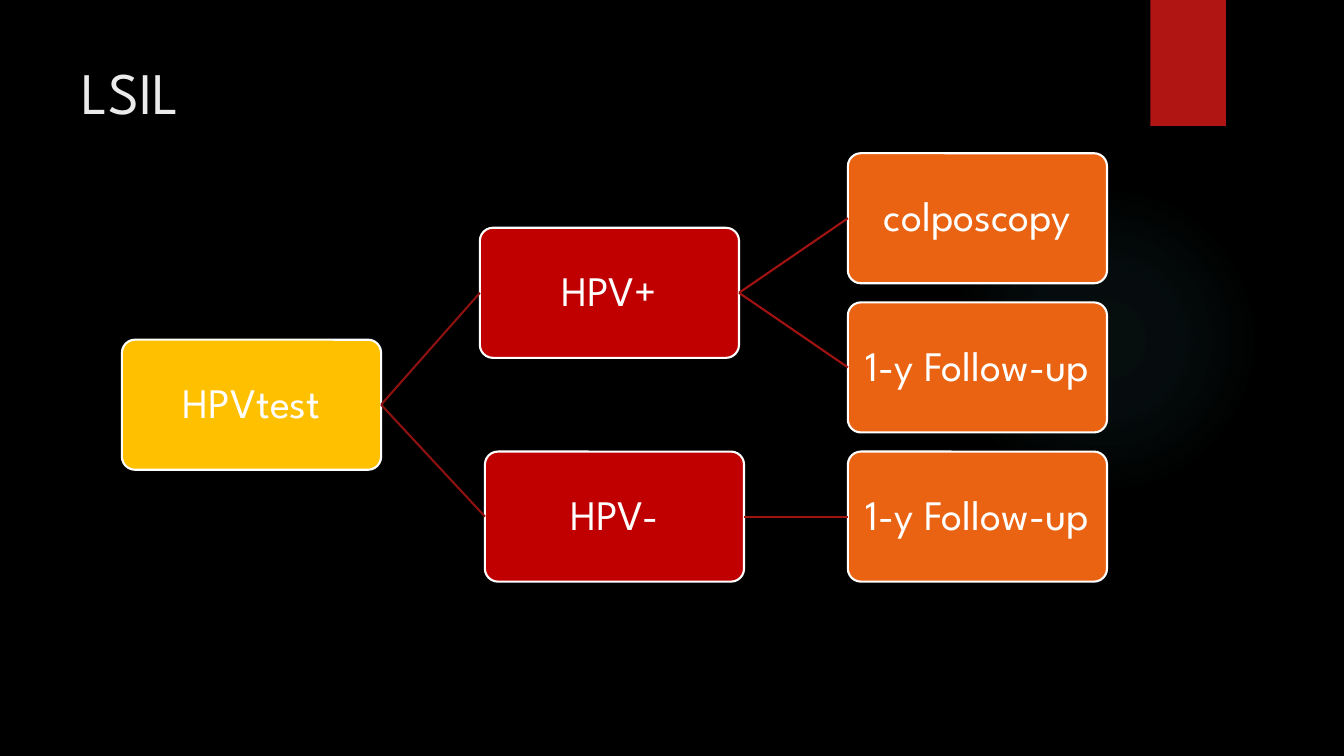
from dataclasses import dataclass
from typing import Optional

from lxml.etree import SubElement
from pptx import Presentation
from pptx.dml.color import RGBColor
from pptx.enum.shapes import MSO_CONNECTOR, MSO_SHAPE
from pptx.enum.text import MSO_ANCHOR, PP_ALIGN
from pptx.oxml import parse_xml
from pptx.oxml.ns import nsdecls, qn
from pptx.shapes.autoshape import Shape
from pptx.slide import Slide
from pptx.util import Inches, Pt

FONT = "League Spartan"
BOX_WIDTH, BOX_HEIGHT = 2.57, 1.29
BOX_INSET = 0.06

# Tree geometry: each parent is centred on the span of its children
LEAF_LEFT = 8.41
LEAF_TOPS = [1.52 + row * 1.48 for row in range(3)]
POSITIVE_TOP = (LEAF_TOPS[0] + LEAF_TOPS[1]) / 2
NEGATIVE_TOP = LEAF_TOPS[2]
TEST_TOP = (POSITIVE_TOP + NEGATIVE_TOP) / 2

YELLOW, RED, ORANGE = "FFC000", "C00000", "EA6312"
DARK_LINK, LIGHT_LINK = "8D110F", "A01311"


@dataclass
class Node:
    label: str
    left: float
    top: float
    fill: str
    parent: Optional[int] = None
    link: str = LIGHT_LINK


NODES = [
    Node("HPVtest", 1.21, TEST_TOP, YELLOW),
    Node("HPV+", 4.76, POSITIVE_TOP, RED, 0, DARK_LINK),
    Node("HPV-", 4.81, NEGATIVE_TOP, RED, 0, DARK_LINK),
    Node("colposcopy", LEAF_LEFT, LEAF_TOPS[0], ORANGE, 1),
    Node("1-y Follow-up", LEAF_LEFT, LEAF_TOPS[1], ORANGE, 1),
    Node("1-y Follow-up", LEAF_LEFT, LEAF_TOPS[2], ORANGE, 2),
]


def color(value: str) -> RGBColor:
    return RGBColor.from_string(value)


def add_plain_shape(page: Slide, kind: MSO_SHAPE, left: float, top: float,
                    width: float, height: float, fill: str) -> Shape:
    shape = page.shapes.add_shape(
        kind, Inches(left), Inches(top), Inches(width), Inches(height))
    shape.shadow.inherit = False
    shape.fill.solid()
    shape.fill.fore_color.rgb = color(fill)
    shape.line.fill.background()
    return shape


def add_glow(page: Slide) -> None:
    glow = add_plain_shape(page, MSO_SHAPE.OVAL, 9.41, 1.83, 3.08, 3.08, "50B9C1")
    stops = "".join(
        f'<a:gs pos="{position * 1000}"><a:srgbClr val="50B9C1">'
        f'<a:alpha val="{alpha * 1000}"/></a:srgbClr></a:gs>'
        for position, alpha in [(0, 7), (36, 6), (69, 0)])
    gradient = parse_xml(
        f'<a:gradFill {nsdecls("a")}><a:gsLst>{stops}</a:gsLst><a:path path="circle">'
        '<a:fillToRect l="50000" t="50000" r="50000" b="50000"/></a:path></a:gradFill>')
    properties = glow.element.spPr
    properties.replace(properties.find(qn("a:solidFill")), gradient)


def style_text(box: Shape, text: str, size: float, text_color: str) -> None:
    box.text_frame.word_wrap = True
    box.text_frame.text = text
    span = box.text_frame.paragraphs[0].runs[0]
    span.font.name = FONT
    span.font.size = Pt(size)
    span.font.color.rgb = color(text_color)


def add_node(page: Slide, node: Node) -> Shape:
    box = add_plain_shape(page, MSO_SHAPE.ROUNDED_RECTANGLE, node.left, node.top,
                          BOX_WIDTH, BOX_HEIGHT, node.fill)
    box.adjustments[0] = 0.1
    box.line.color.rgb = color("FFFFFF")
    box.line.width = Pt(1.5)
    style_text(box, node.label, 30, "FFFFFF")
    frame = box.text_frame
    frame.vertical_anchor = MSO_ANCHOR.MIDDLE
    frame.margin_left = frame.margin_right = Inches(BOX_INSET)
    frame.margin_top = frame.margin_bottom = Inches(BOX_INSET)
    para = frame.paragraphs[0]
    para.alignment = PP_ALIGN.CENTER
    para.line_spacing = 0.9
    return box


def add_link(page: Slide, parent: Shape, child: Shape, line_color: str) -> None:
    link = page.shapes.add_connector(MSO_CONNECTOR.STRAIGHT, 0, 0, 0, 0)
    link.begin_connect(parent, 3)
    link.end_connect(child, 1)
    link.line.color.rgb = color(line_color)
    link.line.width = Pt(1.5)
    SubElement(link.element.spPr, qn("a:effectLst"))


def main() -> None:
    deck = Presentation()
    deck.slide_width, deck.slide_height = Inches(13.33), Inches(7.5)
    page = deck.slides.add_slide(deck.slide_layouts[6])
    page.background.fill.solid()
    page.background.fill.fore_color.rgb = color("000000")

    # Decoration
    add_glow(page)
    add_plain_shape(page, MSO_SHAPE.RECTANGLE, 11.41, 0, 0.75, 1.25, "B01513")

    # Title
    title = page.shapes.add_textbox(Inches(0.71), Inches(0.5), Inches(10.29), Inches(1.53))
    style_text(title, "LSIL", 42, "EBEBEB")

    # Decision tree
    boxes = [add_node(page, node) for node in NODES]
    for node, box in zip(NODES, boxes):
        if node.parent is not None:
            add_link(page, boxes[node.parent], box, node.link)

    deck.save("out.pptx")


if __name__ == "__main__":
    main()
